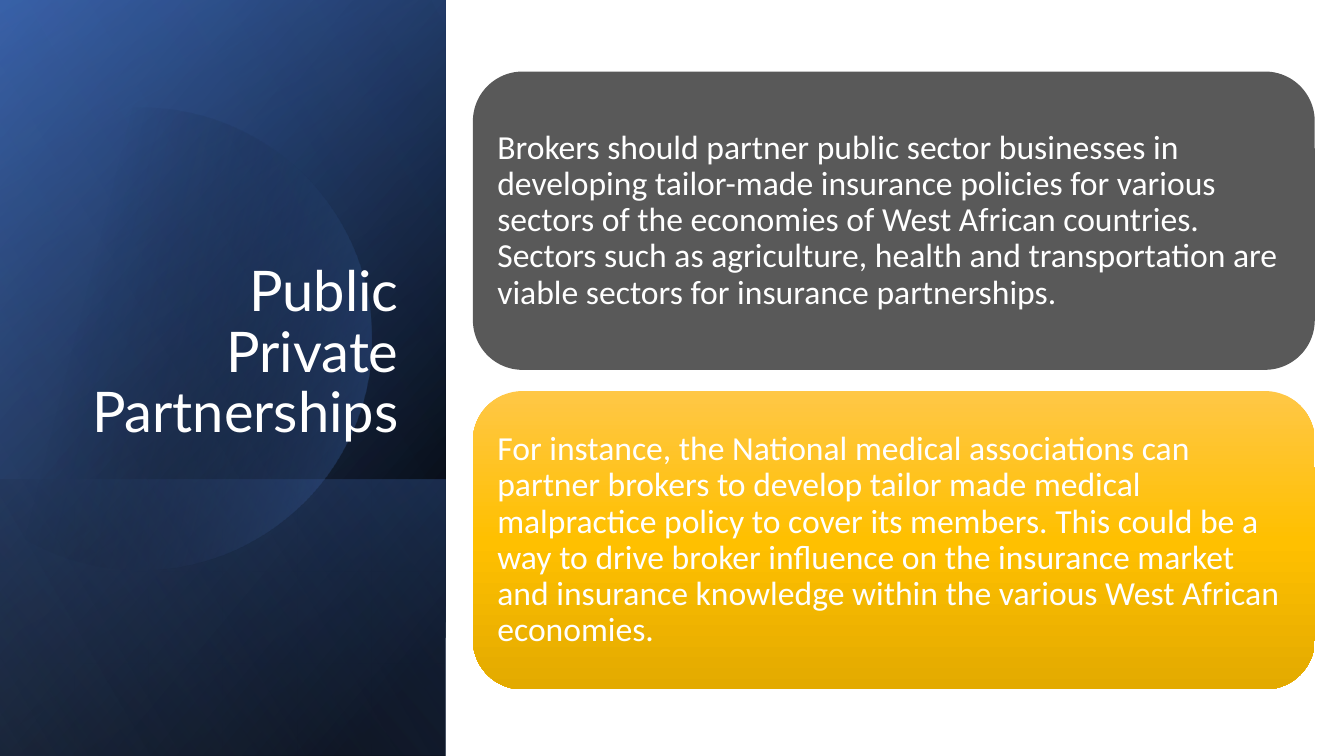
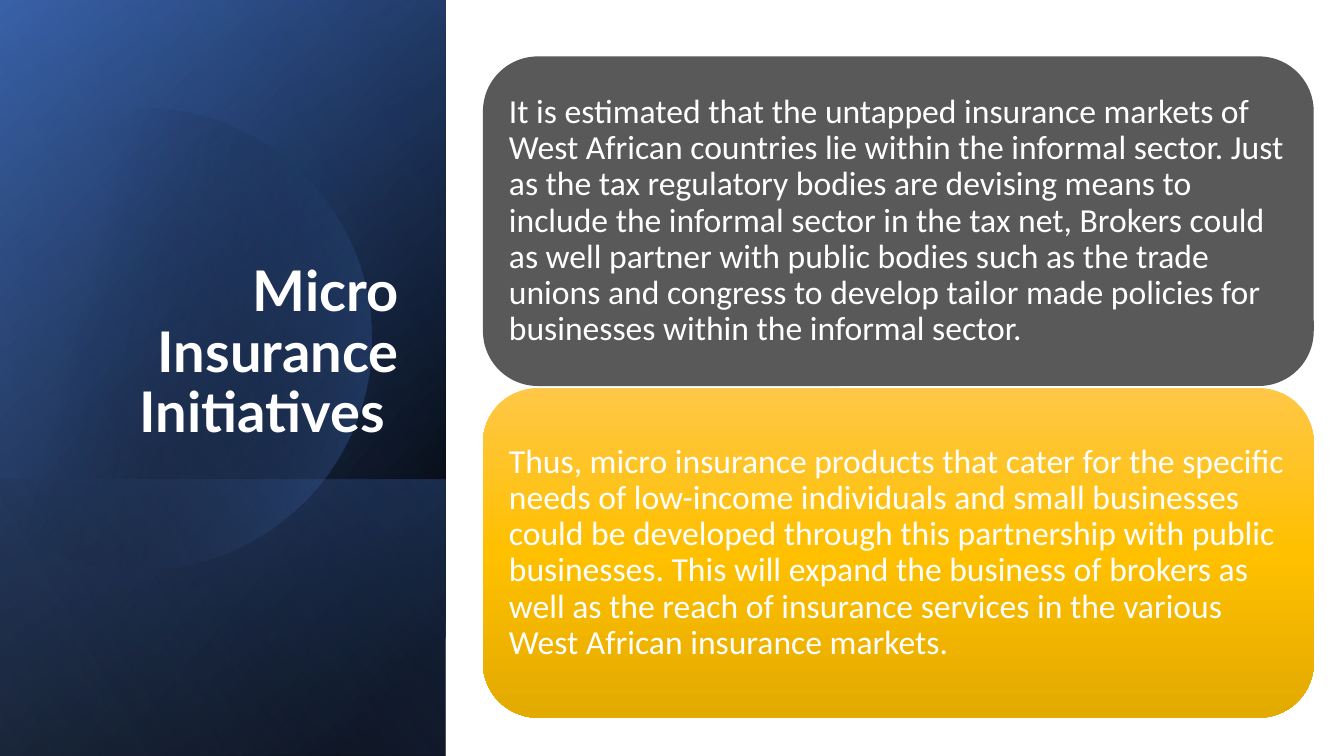
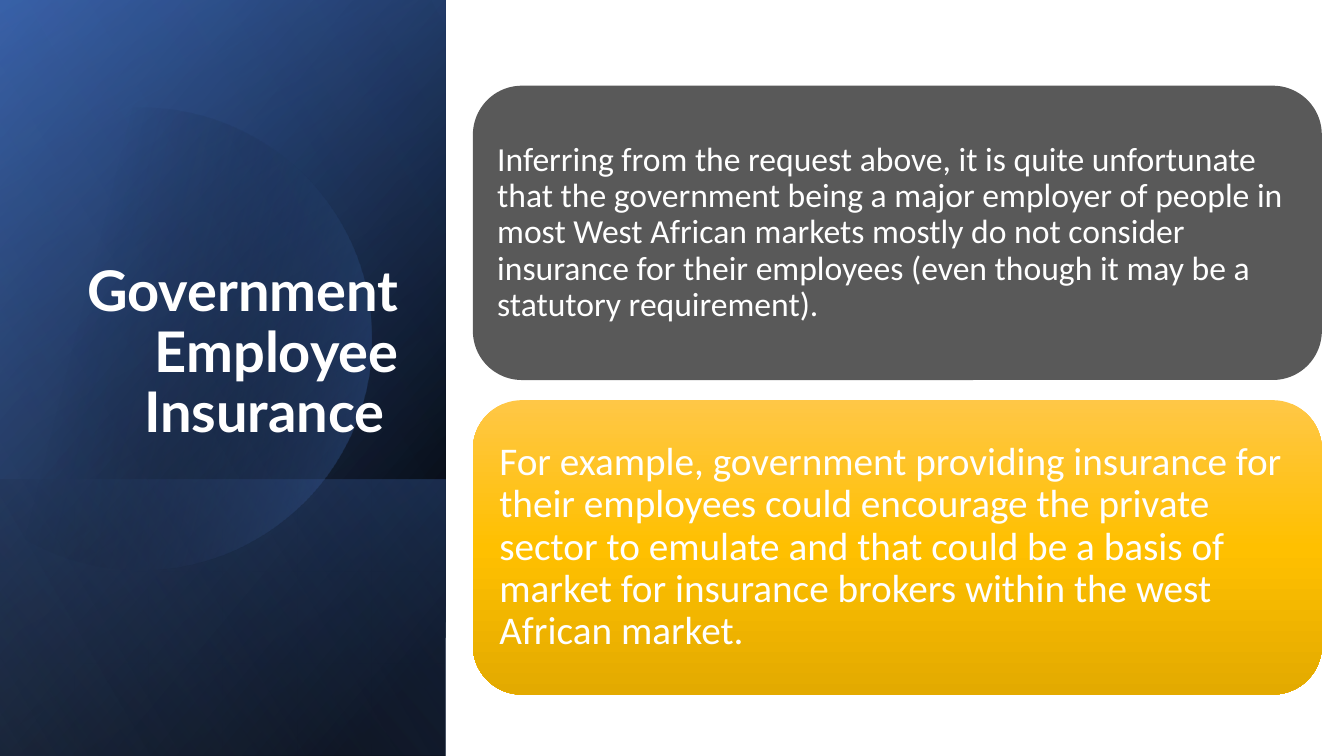
from dataclasses import dataclass
from math import cos, radians, sin

from pptx import Presentation
from pptx.dml.color import RGBColor
from pptx.enum.shapes import MSO_SHAPE as Preset
from pptx.enum.text import MSO_ANCHOR as Anchor, PP_ALIGN as Align
from pptx.oxml import parse_xml
from pptx.oxml.ns import nsdecls, qn
from pptx.util import Inches, Pt


@dataclass(frozen=True)
class Theme:
    white: str = "FFFFFF"
    black: str = "000000"
    navy: str = "2F5597"
    blue: str = "4472C4"
    pale_blue: str = "8FAADC"
    gray: str = "595959"
    gold_stops: tuple = ((0, "FFC746"), (50, "FFC000"), (100, "E3AA00"))
    title_font: str = "Lato"
    body_font: str = "Calibri"
    title_size: int = 40
    body_size: int = 24
    large_size: int = 28


THEME = Theme()
SLIDE_WIDTH, SLIDE_HEIGHT = 13.33, 7.5
PANEL_WIDTH = 4.42


def fill_gradient(shape, stops, angle):
    """Fill with (position %, colour[, opacity %]) stops; the angle is clockwise."""
    stop_xml = ""
    for position, color, *opacity in stops:
        alpha = f'<a:alpha val="{opacity[0] * 1000}"/>' if opacity else ""
        stop_xml += (f'<a:gs pos="{position * 1000}">'
                     f'<a:srgbClr val="{color}">{alpha}</a:srgbClr></a:gs>')
    gradient = parse_xml(
        f'<a:gradFill {nsdecls("a")} rotWithShape="1"><a:gsLst>{stop_xml}</a:gsLst>'
        f'<a:lin ang="{angle * 60000}" scaled="0"/></a:gradFill>')
    shape.fill.background()
    properties = shape._element.spPr
    properties.replace(properties.find(qn("a:noFill")), gradient)


def make_plain(shape):
    shape.shadow.inherit = False
    shape.line.fill.background()


def write_text(shape, text, *, font, size, bold=False, align=Align.LEFT,
               anchor=Anchor.MIDDLE, inset=0.1):
    frame = shape.text_frame
    frame.word_wrap = True
    frame.vertical_anchor = anchor
    frame.margin_left = frame.margin_right = Inches(inset)
    frame.margin_top = frame.margin_bottom = Inches(inset)
    paragraph = frame.paragraphs[0]
    paragraph.alignment = align
    paragraph.line_spacing = 0.9
    run = paragraph.add_run()
    run.text = text
    run.font.name = font
    run.font.size = Pt(size)
    run.font.bold = bold
    run.font.color.rgb = RGBColor.from_string(THEME.white)


def add_panel_layer(slide, top, stops, angle):
    """Cover the panel from top to the slide's foot with a turned, mirrored rectangle."""
    length = SLIDE_HEIGHT - top
    left = (PANEL_WIDTH - length) / 2
    layer = slide.shapes.add_shape(
        Preset.RECTANGLE, Inches(left), Inches(top - left),
        Inches(length), Inches(PANEL_WIDTH))
    layer.rotation = 90
    layer._element.spPr.find(qn("a:xfrm")).set("flipH", "1")
    make_plain(layer)
    fill_gradient(layer, stops, angle)


def add_panel_circle(slide):
    """Draw a circle whose left side is cut off just past the slide's edge."""
    center_x, center_y, radius = 1.39, 3.36, 2.29
    points = [(Inches(center_x + radius * cos(radians(degree))),
               Inches(center_y + radius * sin(radians(degree))))
              for degree in range(-132, 133, 3)]
    builder = slide.shapes.build_freeform(*points[0])
    builder.add_line_segments(points[1:], close=True)
    circle = builder.convert_to_shape()
    make_plain(circle)
    fill_gradient(circle, ((29, THEME.black, 0), (100, THEME.blue, 43)), 14)


def add_title_panel(slide, title, bold):
    add_panel_layer(slide, 0, ((8, THEME.black), (100, THEME.navy)), 50)
    add_panel_layer(slide, 0, ((0, THEME.black, 0), (99, THEME.blue, 46)), 30)
    add_panel_layer(slide, 4.76, ((2, THEME.blue, 29), (100, THEME.black, 30)), 130)
    add_panel_circle(slide)
    add_panel_layer(slide, 0, ((0, THEME.black, 0), (99, THEME.pale_blue, 11)), 120)
    box = slide.shapes.add_textbox(Inches(0.64), Inches(1.84), Inches(3.41), Inches(2.62))
    write_text(box, title, font=THEME.title_font, size=THEME.title_size, bold=bold,
               align=Align.RIGHT, anchor=Anchor.BOTTOM)
    box.text_frame.margin_top = box.text_frame.margin_bottom = Inches(0.05)


def add_card(slide, left, top, width, height, text, size, inset):
    card = slide.shapes.add_shape(
        Preset.ROUNDED_RECTANGLE, Inches(left), Inches(top), Inches(width), Inches(height))
    make_plain(card)
    write_text(card, text, font=THEME.body_font, size=size, inset=inset)
    return card


def add_card_pair(slide, first, second, *, left, top, width, height, gap,
                  second_size=THEME.body_size, second_inset=0.1):
    gray_card = add_card(slide, left, top, width, height, first, THEME.body_size, 0.1)
    gray_card.fill.solid()
    gray_card.fill.fore_color.rgb = RGBColor.from_string(THEME.gray)
    gold_card = add_card(slide, left, top + height + gap, width, height,
                         second, second_size, second_inset)
    fill_gradient(gold_card, THEME.gold_stops, 90)


def add_topic_slide(presentation, title, first, second, *, bold=True, **layout):
    slide = presentation.slides.add_slide(presentation.slide_layouts[6])
    add_title_panel(slide, title, bold)
    add_card_pair(slide, first, second, **layout)


def main():
    presentation = Presentation()
    presentation.slide_width = Inches(SLIDE_WIDTH)
    presentation.slide_height = Inches(SLIDE_HEIGHT)
    add_topic_slide(
        presentation, "Public Private Partnerships",
        "Brokers should partner public sector businesses in developing tailor-made "
        "insurance policies for various sectors of the economies of West African "
        "countries. Sectors such as agriculture, health and transportation are viable "
        "sectors for insurance partnerships.",
        "For instance, the National medical associations can partner brokers to develop "
        "tailor made medical malpractice policy to cover its members. This could be a way "
        "to drive broker influence on the insurance market and insurance knowledge within "
        "the various West African economies.",
        bold=False, left=4.69, top=0.71, width=8.35, height=2.96, gap=0.21)
    add_topic_slide(
        presentation, "Micro Insurance Initiatives ",
        "It is estimated that the untapped insurance markets of West African countries "
        "lie within the informal sector. Just as the tax regulatory bodies are devising "
        "means to include the informal sector in the tax net, Brokers could as well "
        "partner with public bodies such as the trade unions and congress to develop "
        "tailor made policies for businesses within the informal sector.",
        "Thus, micro insurance products that cater for the specific needs of low-income "
        "individuals and small businesses could be developed through this partnership "
        "with public businesses. This will expand the business of brokers as well as the "
        "reach of insurance services in the various West African insurance markets.",
        left=4.79, top=0.56, width=8.24, height=3.27, gap=0.02)
    add_topic_slide(
        presentation, "Government Employee Insurance ",
        "Inferring from the request above, it is quite unfortunate that the government "
        "being a major employer of people in most West African markets mostly do not "
        "consider insurance for their employees (even though it may be a statutory "
        "requirement).",
        "For example, government providing insurance for their employees could encourage "
        "the private sector to emulate and that could be a basis of market for insurance "
        "brokers within the west African market.",
        left=4.69, top=0.85, width=8.42, height=2.92, gap=0.2,
        second_size=THEME.large_size, second_inset=0.12)
    presentation.save("out.pptx")


if __name__ == "__main__":
    main()
